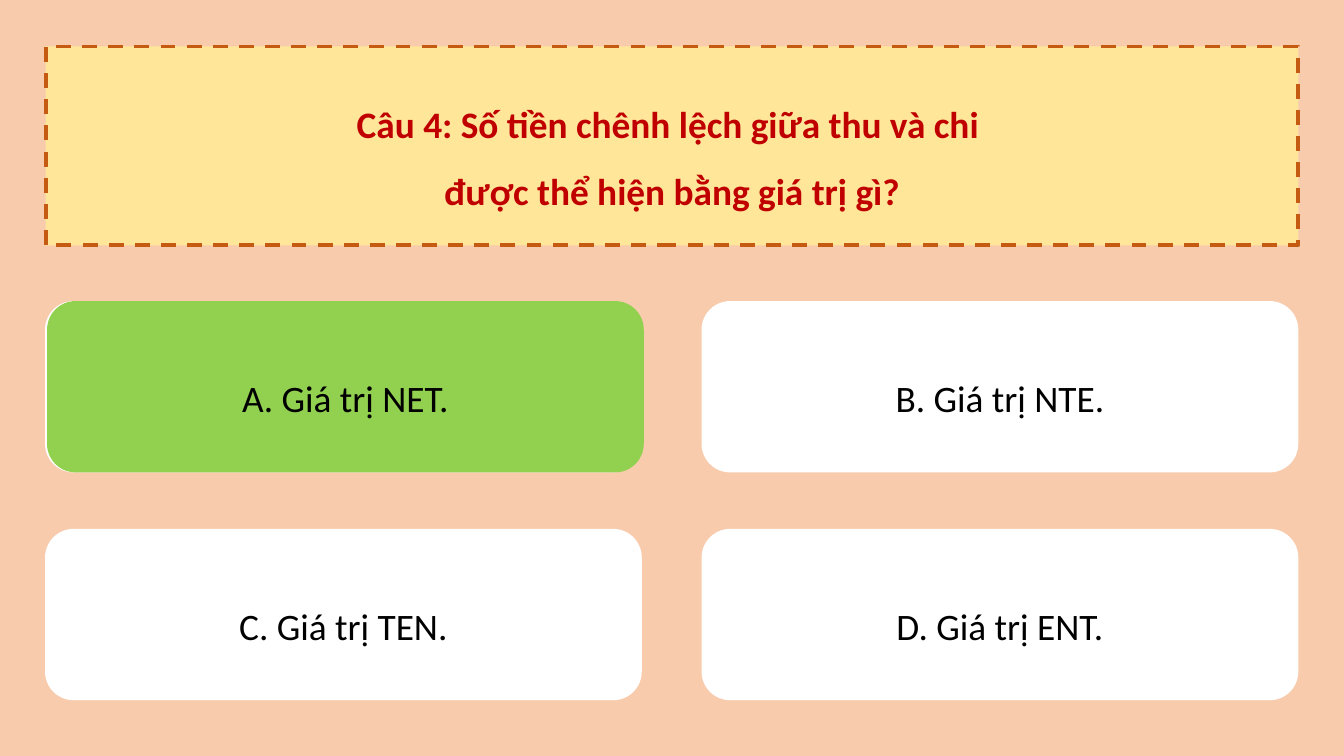
from lxml.etree import SubElement
from pptx import Presentation
from pptx.dml.color import RGBColor
from pptx.enum.dml import MSO_LINE
from pptx.enum.shapes import MSO_SHAPE
from pptx.enum.text import MSO_ANCHOR, PP_ALIGN
from pptx.oxml.ns import qn
from pptx.util import Inches, Pt

# Content
QUESTION = ["Câu 4: Số tiền chênh lệch giữa thu và chi ",
            "được thể hiện bằng giá trị gì?"]
ANSWERS = [["A. Giá trị NET.", "B. Giá trị NTE."],
           ["C. Giá trị TEN.", "D. Giá trị ENT."]]

# Layout in inches
LEFT, TOP = 0.67, 4.48
WIDTH, HEIGHT = 8.88, 2.55
COLUMN_STEP, ROW_STEP = 9.77, 3.39


def color(value):
    return RGBColor.from_string(value)


def fill_shape(shape, value):
    shape.fill.solid()
    shape.fill.fore_color.rgb = color(value)


def write_lines(shape, lines, text_color, bold=False):
    frame = shape.text_frame
    frame.word_wrap = True
    frame.vertical_anchor = MSO_ANCHOR.MIDDLE
    for index, line in enumerate(lines):
        para = frame.add_paragraph() if index else frame.paragraphs[0]
        para.alignment = PP_ALIGN.CENTER
        para.line_spacing = 1.5
        span = para.add_run()
        span.text = line
        span.font.name = "Calibri"
        span.font.size = Pt(40)
        span.font.bold = bold
        span.font.color.rgb = color(text_color)


def add_answer(page, text, left, top, fill):
    box = page.shapes.add_shape(MSO_SHAPE.ROUNDED_RECTANGLE, Inches(left),
                                Inches(top), Inches(WIDTH), Inches(HEIGHT))
    box.shadow.inherit = False
    box.line.fill.background()
    fill_shape(box, fill)
    write_lines(box, [text], "000000")


def add_question(page):
    title = page.shapes.title
    title.left, title.top = Inches(0.68), Inches(0.69)
    title.width, title.height = Inches(18.64), Inches(2.96)
    # Rounded outline for the title placeholder
    properties = title.element.spPr
    geometry = SubElement(properties, qn("a:prstGeom"), prst="roundRect")
    adjustments = SubElement(geometry, qn("a:avLst"))
    SubElement(adjustments, qn("a:gd"), name="adj", fmla="val 12400")
    fill_shape(title, "FFE699")
    title.line.color.rgb = color("C55A11")
    title.line.width = Pt(4)
    title.line.dash_style = MSO_LINE.DASH
    write_lines(title, QUESTION, "C00000", bold=True)


def main():
    deck = Presentation()
    deck.slide_width, deck.slide_height = Inches(20), Inches(11.25)
    page = deck.slides.add_slide(deck.slide_layouts[5])
    page.background.fill.solid()
    page.background.fill.fore_color.rgb = color("F8CBAD")

    add_question(page)

    # Answer grid
    for row, answers in enumerate(ANSWERS):
        for column, text in enumerate(answers):
            add_answer(page, text, LEFT + column * COLUMN_STEP,
                       TOP + row * ROW_STEP, "FFFFFF")

    # Green card that reveals the correct answer
    add_answer(page, ANSWERS[0][0], LEFT + 0.03, TOP, "92D050")

    deck.save("out.pptx")


if __name__ == "__main__":
    main()
